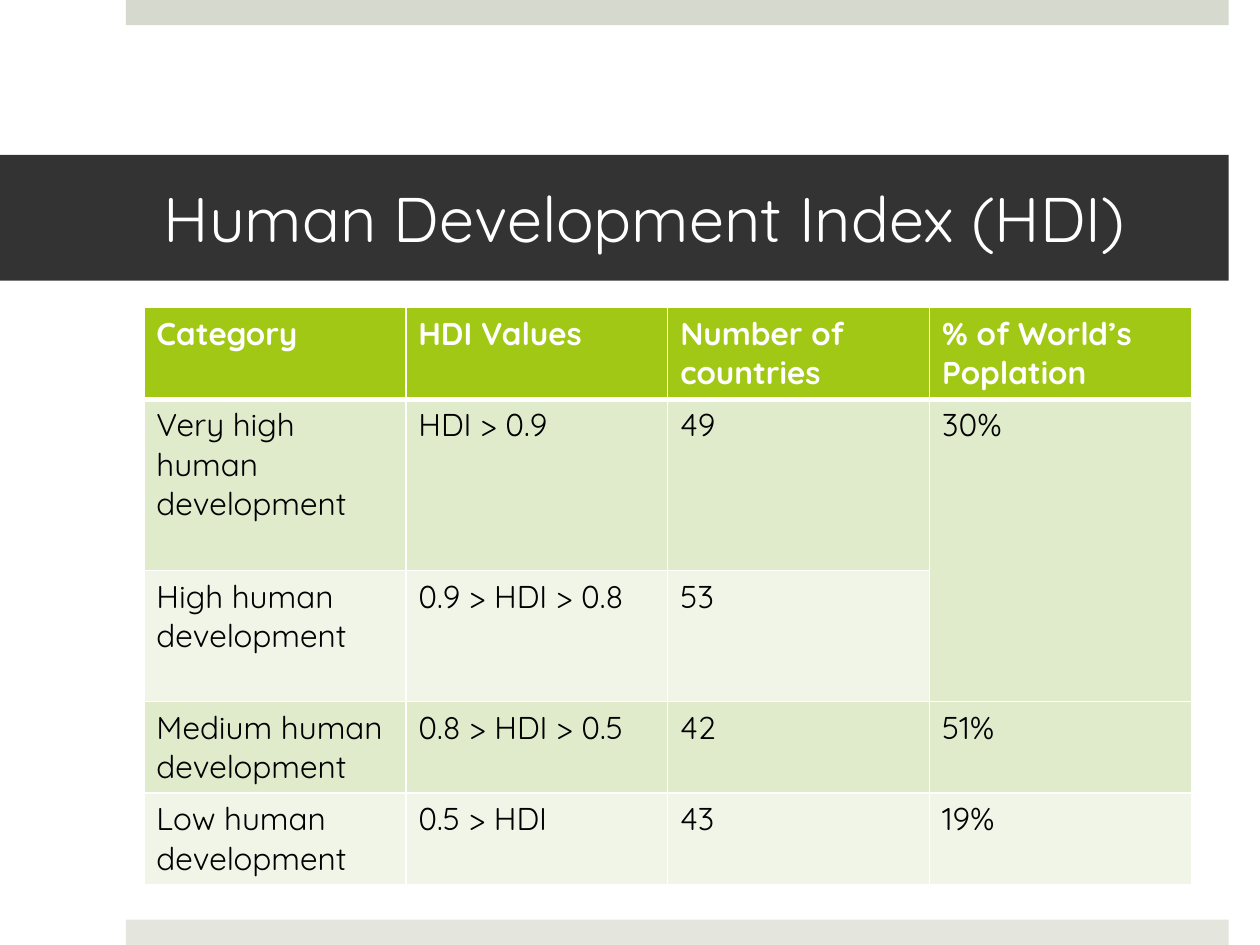
from lxml.etree import SubElement
from pptx import Presentation
from pptx.dml.color import RGBColor
from pptx.enum.shapes import MSO_SHAPE
from pptx.enum.text import MSO_ANCHOR, MSO_AUTO_SIZE, PP_ALIGN
from pptx.oxml.ns import qn
from pptx.util import Cm, Pt

TITLE = "Human Development Index (HDI)"
ROWS = [
    ("Category", "HDI Values", "Number of countries", "% of World’s Poplation"),
    ("Very high human development", "HDI > 0.9", "49", "30%"),
    ("High human development", "0.9 > HDI > 0.8", "53", ""),
    ("Medium human development", "0.8 > HDI > 0.5", "42", "51%"),
    ("Low human development", "0.5 > HDI", "43", "19%"),
]
ROW_HEIGHTS = [1.83, 3.45, 2.64, 1.83, 1.83]
COL_WIDTH = 5.28
BARS = [(0, "D6D9CD"), (18.54, "E4E6DE")]
HEADER_FILL = "A2C816"
BAND_FILLS = ["F0F5E8", "E0EBCC"]
FONT = "Quicksand"


def paint(fill, color):
    fill.solid()
    fill.fore_color.rgb = RGBColor.from_string(color)


def set_font(p, size, color, bold=False):
    p.font.name = FONT
    p.font.size = Pt(size)
    p.font.bold = bold
    p.font.color.rgb = RGBColor.from_string(color)


def set_borders(cell, top, bottom):
    tc_pr = cell._tc.get_or_add_tcPr()
    for side, width in (("L", 1), ("R", 1), ("T", top), ("B", bottom)):
        ln = SubElement(tc_pr, qn(f"a:ln{side}"), w=str(Pt(width)))
        SubElement(SubElement(ln, qn("a:solidFill")), qn("a:srgbClr"), val="FFFFFF")


def add_bar(s, top, color):
    bar = s.shapes.add_shape(MSO_SHAPE.RECTANGLE, Cm(2.54), Cm(top), Cm(22.23), Cm(0.51))
    bar.shadow.inherit = False
    bar.line.fill.background()
    paint(bar.fill, color)


def add_title(s):
    title = s.shapes.title
    title.left, title.top, title.width, title.height = Cm(0), Cm(3.12), Cm(24.77), Cm(2.54)
    paint(title.fill, "333333")
    tf = title.text_frame
    tf.text = TITLE
    tf.auto_size = MSO_AUTO_SIZE.NONE
    tf.vertical_anchor = MSO_ANCHOR.MIDDLE
    tf.margin_left, tf.margin_right = Cm(3.3), Cm(0.76)
    p = tf.paragraphs[0]
    p.alignment = PP_ALIGN.LEFT
    set_font(p, 36, "FFFFFF")


def add_hdi_table(s):
    cols = len(ROWS[0])
    table = s.shapes.add_table(len(ROWS), cols, Cm(2.9), Cm(6.2),
                               Cm(COL_WIDTH * cols), Cm(sum(ROW_HEIGHTS))).table
    for col in table.columns:
        col.width = Cm(COL_WIDTH)
    for i, (values, height) in enumerate(zip(ROWS, ROW_HEIGHTS)):
        table.rows[i].height = Cm(height)
        header = i == 0
        for j, value in enumerate(values):
            cell = table.cell(i, j)
            cell.text = value
            set_font(cell.text_frame.paragraphs[0], 18, "FFFFFF" if header else "000000", header)
            set_borders(cell, 3 if i == 1 else 1, 3 if header else 1)
            paint(cell.fill, HEADER_FILL if header else BAND_FILLS[i % 2])
    table.cell(1, 3).merge(table.cell(2, 3))


def main():
    """Build the Human Development Index slide."""
    prs = Presentation()
    prs.slide_width, prs.slide_height = Cm(25.4), Cm(19.05)
    s = prs.slides.add_slide(prs.slide_layouts[5])
    for top, color in BARS:
        add_bar(s, top, color)
    add_title(s)
    add_hdi_table(s)
    prs.save("out.pptx")


if __name__ == "__main__":
    main()
